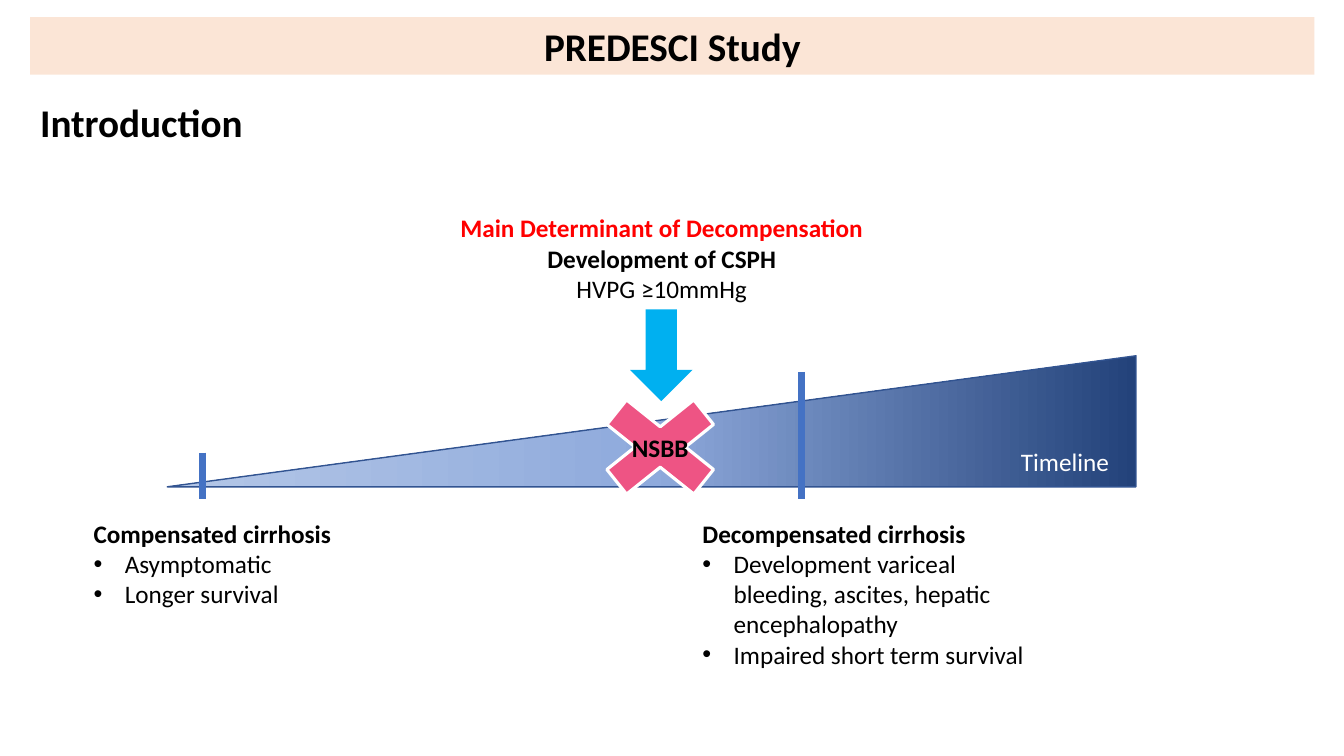
from copy import deepcopy

from lxml.etree import SubElement
from pptx import Presentation
from pptx.dml.color import RGBColor
from pptx.enum.shapes import MSO_CONNECTOR, MSO_SHAPE
from pptx.enum.text import MSO_ANCHOR, PP_ALIGN
from pptx.oxml.ns import qn
from pptx.util import Inches, Pt

CELL = 0.1  # side of a grid cell in inches
BULLET_INDENT = Inches(0.31)
rgb = RGBColor.from_string


def grid(*cells):
    """Turn columns and rows into lengths."""
    return [Inches(cell * CELL) for cell in cells]


def write(shape, lines, size=18, align=PP_ALIGN.LEFT, anchor=MSO_ANCHOR.TOP):
    """Fill a shape with lines given as (text, colour, bold, bulleted)."""
    frame = shape.text_frame
    frame.word_wrap = True
    frame.vertical_anchor = anchor
    for number, (text, colour, bold, bulleted) in enumerate(lines):
        paragraph = frame.add_paragraph() if number else frame.paragraphs[0]
        paragraph.text = text
        paragraph.alignment = align
        paragraph.font.name = "Calibri"
        paragraph.font.size = Pt(size)
        paragraph.font.bold = bold
        paragraph.font.color.rgb = rgb(colour)
        if bulleted:
            properties = paragraph._p.get_or_add_pPr()
            properties.set("marL", str(BULLET_INDENT))
            properties.set("indent", str(-BULLET_INDENT))
            bullet_font = properties.makeelement(qn("a:buFont"), {"typeface": "Arial"})
            bullet = properties.makeelement(qn("a:buChar"), {"char": "•"})
            properties.insert(0, bullet_font)
            bullet_font.addnext(bullet)


presentation = Presentation()
presentation.slide_width, presentation.slide_height = grid(133.33, 75)
slide = presentation.slides.add_slide(presentation.slide_layouts[6])
shapes = slide.shapes

# Title band and section heading
title = shapes.add_shape(MSO_SHAPE.RECTANGLE, *grid(3, 1.7, 127.4, 5.7))
title.shadow.inherit = False
title.fill.solid()
title.fill.fore_color.rgb = rgb("FBE5D6")
title.line.fill.background()
write(title, [("PREDESCI Study", "000000", True, False)], 28,
      PP_ALIGN.CENTER, MSO_ANCHOR.MIDDLE)
heading = shapes.add_textbox(*grid(3, 9.3, 43.3, 5.7))
write(heading, [("Introduction", "000000", True, False)], 28)

# Timeline wedge, growing darker to the right
timeline = shapes.add_shape(MSO_SHAPE.RIGHT_TRIANGLE, *grid(16.6, 35.3, 96.1, 13))
timeline.shadow.inherit = False
timeline._element.spPr.find(qn("a:xfrm")).set("flipH", "1")
timeline.line.color.rgb = rgb("325491")
timeline.line.width = Pt(1)
timeline.fill.gradient()
timeline.fill.gradient_angle = 0
stop_list = timeline._element.spPr.find(qn("a:gradFill")).find(qn("a:gsLst"))
stop_list.insert(1, deepcopy(stop_list[0]))
for stop, position, colour in zip(timeline.fill.gradient_stops, (0, 0.5, 1),
                                  ("23427A", "8FAADC", "B4C7E7")):
    stop.position = position
    stop.color.rgb = rgb(colour)

# Stage marks on the timeline
for column, top in ((20.1, 44.9), (79.5, 36.9)):
    mark = shapes.add_connector(MSO_CONNECTOR.STRAIGHT,
                                *grid(column, top, column, 49.5))
    mark.line.color.rgb = rgb("4472C4")
    mark.line.width = Pt(4.5)
    SubElement(mark._element.spPr, qn("a:effectLst"))

# Stage descriptions
stages = (
    (8.3, 10.1, "Compensated cirrhosis", ("Asymptomatic", "Longer survival")),
    (68.7, 16.2, "Decompensated cirrhosis",
     ("Development variceal bleeding, ascites, hepatic encephalopathy",
      "Impaired short term survival")),
)
for column, height, stage, features in stages:
    description = shapes.add_textbox(*grid(column, 50.9, 35.7, height))
    write(description, [(stage, "000000", True, False)]
          + [(feature, "000000", False, True) for feature in features])

# Determinant of decompensation and its arrow
arrow = shapes.add_shape(MSO_SHAPE.DOWN_ARROW, *grid(62.5, 30.7, 6.2, 9.1))
arrow.shadow.inherit = False
arrow.fill.solid()
arrow.fill.fore_color.rgb = rgb("00B0F0")
arrow.line.fill.background()
timeline_label = shapes.add_textbox(*grid(100.3, 43.8, 11, 4))
write(timeline_label, [("Timeline", "FFFFFF", False, False)])
determinant = shapes.add_textbox(*grid(44, 20.6, 43.3, 10.1))
write(determinant, [
    ("Main Determinant of Decompensation", "FF0000", True, False),
    ("Development of CSPH", "000000", True, False),
    ("HVPG ≥10mmHg", "000000", False, False),
], align=PP_ALIGN.CENTER)

# Treatment that blocks the progression
treatment = shapes.add_shape(MSO_SHAPE.MATH_MULTIPLY, *grid(57.2, 37.7, 16.6, 13.3))
treatment.shadow.inherit = False
treatment.fill.solid()
treatment.fill.fore_color.rgb = rgb("EE5484")
treatment.line.color.rgb = rgb("FFFFFF")
treatment.line.width = Pt(2.25)
write(treatment, [("NSBB", "000000", True, False)],
      align=PP_ALIGN.CENTER, anchor=MSO_ANCHOR.MIDDLE)

presentation.save("out.pptx")
